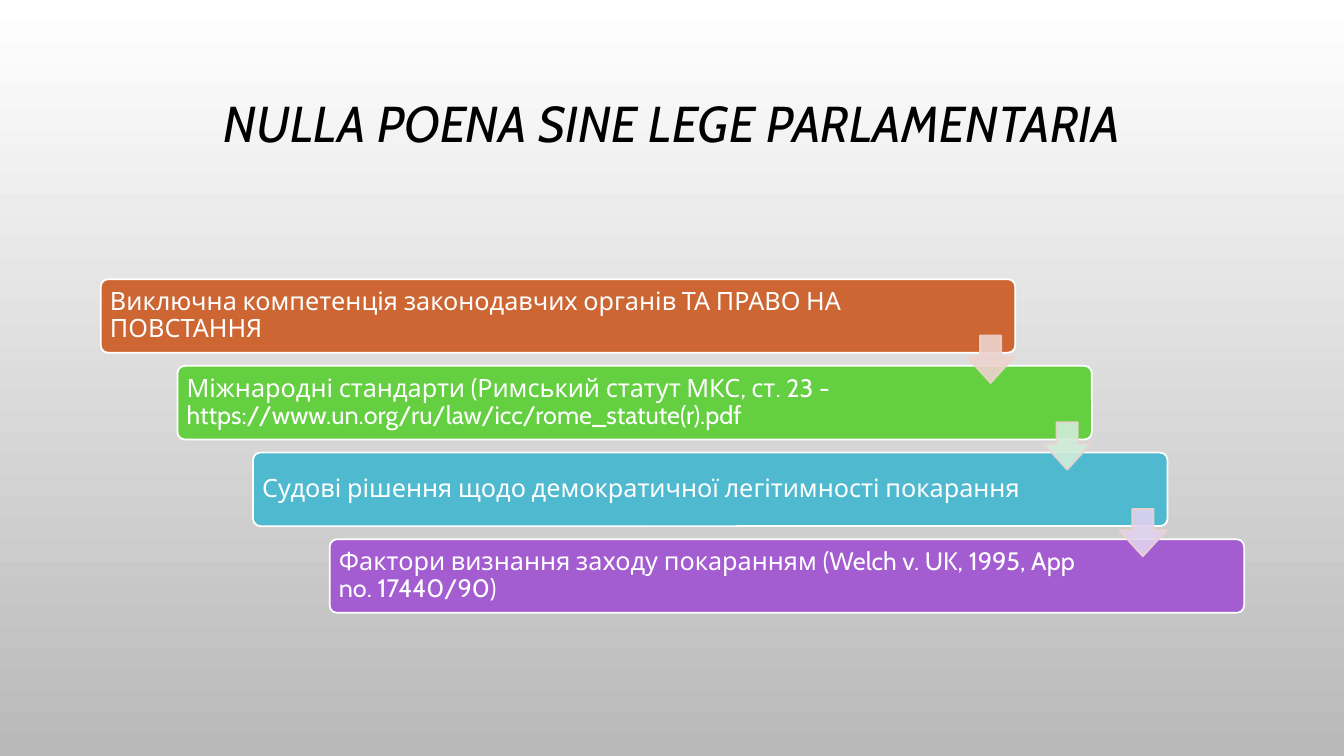
from pptx import Presentation
from pptx.dml.color import RGBColor
from pptx.enum.shapes import MSO_SHAPE
from pptx.enum.text import MSO_ANCHOR, PP_ALIGN
from pptx.oxml.ns import qn
from pptx.util import Pt
from lxml import etree

PX = 9144  # 100 px to the inch


def rgb(value):
    return RGBColor.from_string(value)


def add_block(kind, x, y, w, h, fill, line):
    s = slide.shapes.add_shape(kind, x * PX, y * PX, w * PX, h * PX)
    s.shadow.inherit = False
    s.fill.solid()
    s.fill.fore_color.rgb = rgb(fill)
    s.line.color.rgb = rgb(line)
    s.line.width = Pt(1.25)
    return s


prs = Presentation()
prs.slide_width, prs.slide_height = 1333 * PX, 750 * PX
slide = prs.slides.add_slide(prs.slide_layouts[6])

# Background: white at the top to grey at the bottom
bg = slide.background.fill
bg.gradient()
bg.gradient_angle = 270
for stop, color, position in zip(bg.gradient_stops, ("FFFFFF", "B9B9B9"), (0, 1)):
    stop.color.rgb = rgb(color)
    stop.position = position

# Title, raised above the middle of its box by the bottom margin
title = slide.shapes.add_textbox(100 * PX, 68 * PX, 1133 * PX, 175 * PX)
tf = title.text_frame
tf.word_wrap = True
tf.vertical_anchor = MSO_ANCHOR.MIDDLE
tf.margin_bottom = 66 * PX
tf.text = "NULLA POENA SINE LEGE PARLAMENTARIA"
p = tf.paragraphs[0]
p.alignment = PP_ALIGN.CENTER
p.line_spacing = 0.9
font = p.runs[0].font
font.name, font.size, font.italic = "Cabin", Pt(36), True
font.color.rgb = rgb("000000")

# Staircase of steps
STEPS = [
    ("CE6633", "Виключна компетенція законодавчих органів ТА ПРАВО НА ПОВСТАННЯ"),
    ("64CF41", "Міжнародні стандарти (Римський статут МКС, ст. 23 - "
               "https://www.un.org/ru/law/icc/rome_statute(r).pdf"),
    ("4FB9D0", "Судові рішення щодо демократичної легітимності покарання"),
    ("A35DD1", "Фактори визнання заходу покаранням (Welch v. UK, 1995, App no. 17440/90)"),
]
corners = [(100 + round(i * 75.7), 277 + i * 86) for i in range(len(STEPS))]

for (x, y), (color, text) in zip(corners, STEPS):
    s = add_block(MSO_SHAPE.ROUNDED_RECTANGLE, x, y, 907, 73, color, "FFFFFF")
    s.adjustments[0] = 0.1
    tf = s.text_frame
    tf.word_wrap = True
    tf.vertical_anchor = MSO_ANCHOR.MIDDLE
    tf.margin_left = tf.margin_top = tf.margin_bottom = 7 * PX
    tf.margin_right = 133 * PX  # room for the arrow
    tf.text = text
    p = tf.paragraphs[0]
    p.alignment = PP_ALIGN.LEFT
    p.line_spacing = 0.9
    font = p.runs[0].font
    font.name, font.size = "Cabin", Pt(18)
    font.color.rgb = rgb("FFFFFF")

# Translucent arrows from each step to the next
for (x, y), color in zip(corners, ("EDD3CE", "D0EDDA", "E0D2EE")):
    s = add_block(MSO_SHAPE.DOWN_ARROW, x + 859, y + 56, 47, 47, color, "EDD3CE")
    s.adjustments[0] = 0.45
    s.adjustments[1] = 0.55
    for clr in s.element.spPr.iter(qn("a:srgbClr")):
        etree.SubElement(clr, qn("a:alpha"), val="90000")

prs.save("out.pptx")
